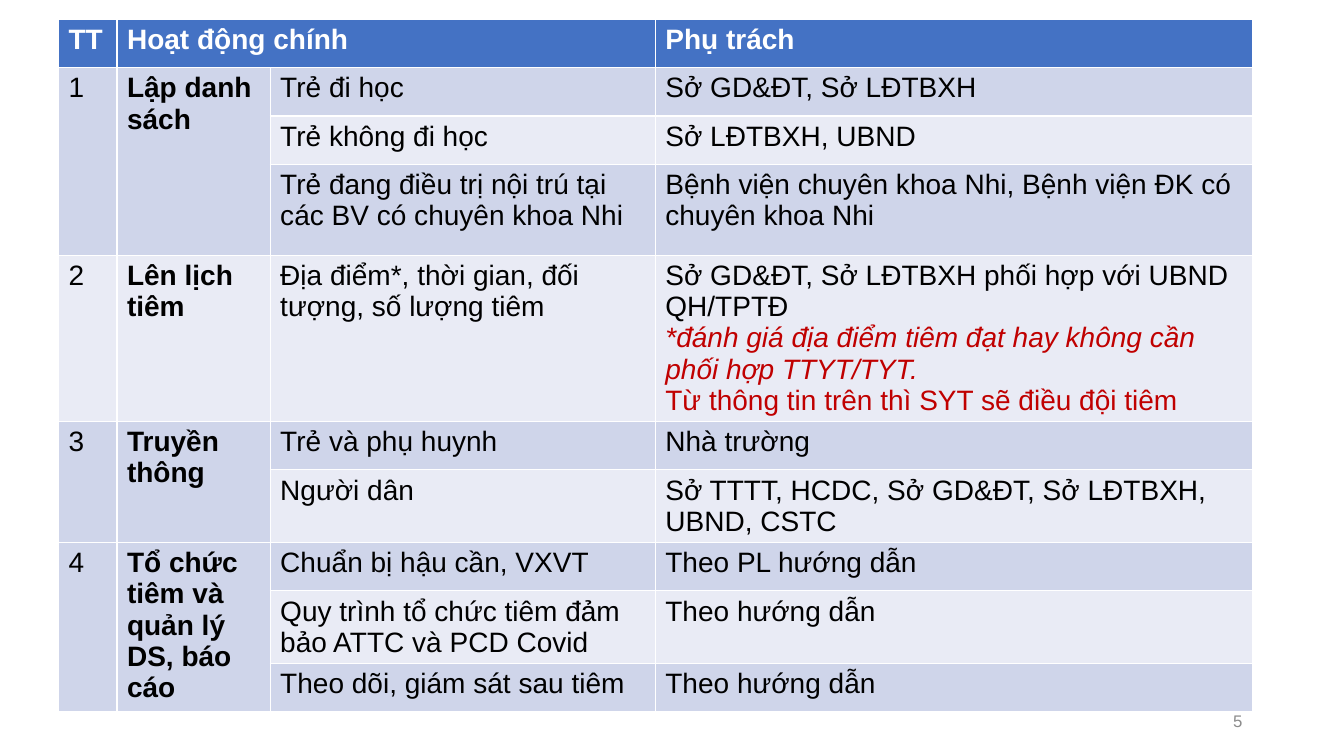
from lxml import etree
from pptx import Presentation
from pptx.dml.color import RGBColor
from pptx.enum import text
from pptx.oxml.ns import qn
from pptx.util import Inches, Pt

COLORS = {"header": "4472C4", "odd": "CFD5EA", "even": "E9EBF5", "white": "FFFFFF",
          "black": "000000", "red": "C00000", "number": "8C8C8C"}
HEADER = ("TT", "Hoạt động chính", "Phụ trách")
GROUPS = [
    ("Lập danh sách", [
        ("Trẻ đi học", ["Sở GD&ĐT, Sở LĐTBXH"], 0.48),
        ("Trẻ không đi học", ["Sở LĐTBXH, UBND"], 0.48),
        ("Trẻ đang điều trị nội trú tại các BV có chuyên khoa Nhi",
         ["Bệnh viện chuyên khoa Nhi, Bệnh viện ĐK có chuyên khoa Nhi"], 0.9)]),
    ("Lên lịch tiêm", [
        ("Địa điểm*, thời gian, đối tượng, số lượng tiêm",
         ["Sở GD&ĐT, Sở LĐTBXH phối hợp với UBND QH/TPTĐ",
          ("*đánh giá địa điểm tiêm đạt hay không cần phối hợp TTYT/TYT.",
           {"color": "red", "italic": True}),
          ("Từ thông tin trên thì SYT sẽ điều đội tiêm", {"color": "red"})], 1.19)]),
    ("Truyền thông", [
        ("Trẻ và phụ huynh", ["Nhà trường"], 0.48),
        ("Người dân", ["Sở TTTT, HCDC, Sở GD&ĐT, Sở LĐTBXH, UBND, CSTC"], 0.48)]),
    ("Tổ chức tiêm và quản lý DS, báo cáo", [
        ("Chuẩn bị hậu cần, VXVT", ["Theo PL hướng dẫn"], 0.48),
        ("Quy trình tổ chức tiêm đảm bảo ATTC và PCD Covid", ["Theo hướng dẫn"], 0.48),
        ("Theo dõi, giám sát sau tiêm", ["Theo hướng dẫn"], 0.48)]),
]
COLUMNS = (0.58, 1.52, 3.82, 5.92)
ROWS = [0.48] + [row[2] for _, rows in GROUPS for row in rows]


def rgb(name):
    return RGBColor.from_string(COLORS[name])


def write(tf, lines, **base):
    for i, line in enumerate(lines):
        content, extra = line if isinstance(line, tuple) else (line, {})
        p = tf.paragraphs[0] if i == 0 else tf.add_paragraph()
        r = p.add_run()
        r.text = content
        look = {"name": "Arial", "size": Pt(20), "bold": False, "color": "black", **base, **extra}
        r.font.color.rgb = rgb(look.pop("color"))
        for key, value in look.items():
            setattr(r.font, key, value)


def fill_cell(cell, fill, widths):
    tc_pr = cell._tc.get_or_add_tcPr()
    for side, width in zip("LRTB", widths):
        ln = etree.SubElement(tc_pr, qn(f"a:ln{side}"), w=str(Pt(width)))
        solid = etree.SubElement(ln, qn("a:solidFill"))
        etree.SubElement(solid, qn("a:srgbClr"), val=COLORS["white"])
    cell.fill.solid()
    cell.fill.fore_color.rgb = rgb(fill)


prs = Presentation()
prs.slide_width, prs.slide_height = Inches(13.33), Inches(7.5)
s = prs.slides.add_slide(prs.slide_layouts[6])

frame = s.shapes.add_table(len(ROWS), len(COLUMNS), Inches(0.58), Inches(0.19),
                           Inches(sum(COLUMNS)), Inches(sum(ROWS)))
table = frame.table
for column, width in zip(table.columns, COLUMNS):
    column.width = Inches(width)
for row, height in zip(table.rows, ROWS):
    row.height = Inches(height)

starts = {0, 1}
top = 1
for _, rows in GROUPS:
    top += len(rows)
    starts.add(top)
last = len(COLUMNS) - 1
for y in range(len(ROWS)):
    fill = "header" if y == 0 else ("even", "odd")[y % 2]
    for x in range(len(COLUMNS)):
        edges = (0.5 if x == 0 else 1, 0.5 if x == last else 1,
                 0.5 if y in starts or x < 2 else 1, 0.5 if y + 1 in starts or x < 2 else 1)
        fill_cell(table.cell(y, x), fill, edges)

table.cell(0, 1).merge(table.cell(0, 2))
for x, heading in zip((0, 1, 3), HEADER):
    write(table.cell(0, x).text_frame, [heading], bold=True, color="white")

y = 1
for index, (activity, rows) in enumerate(GROUPS, 1):
    for x, label in enumerate((str(index), activity)):
        if len(rows) > 1:
            table.cell(y, x).merge(table.cell(y + len(rows) - 1, x))
        write(table.cell(y, x).text_frame, [label], bold=x == 1)
    for task, owners, _ in rows:
        write(table.cell(y, 2).text_frame, [task])
        write(table.cell(y, 3).text_frame, owners)
        y += 1

number = s.shapes.add_textbox(Inches(9.42), Inches(6.95), Inches(3), Inches(0.4))
tf = number.text_frame
tf.word_wrap = True
tf.vertical_anchor = text.MSO_ANCHOR.MIDDLE
write(tf, ["5"], size=Pt(12), color="number")
tf.paragraphs[0].alignment = text.PP_ALIGN.RIGHT

prs.save("out.pptx")
